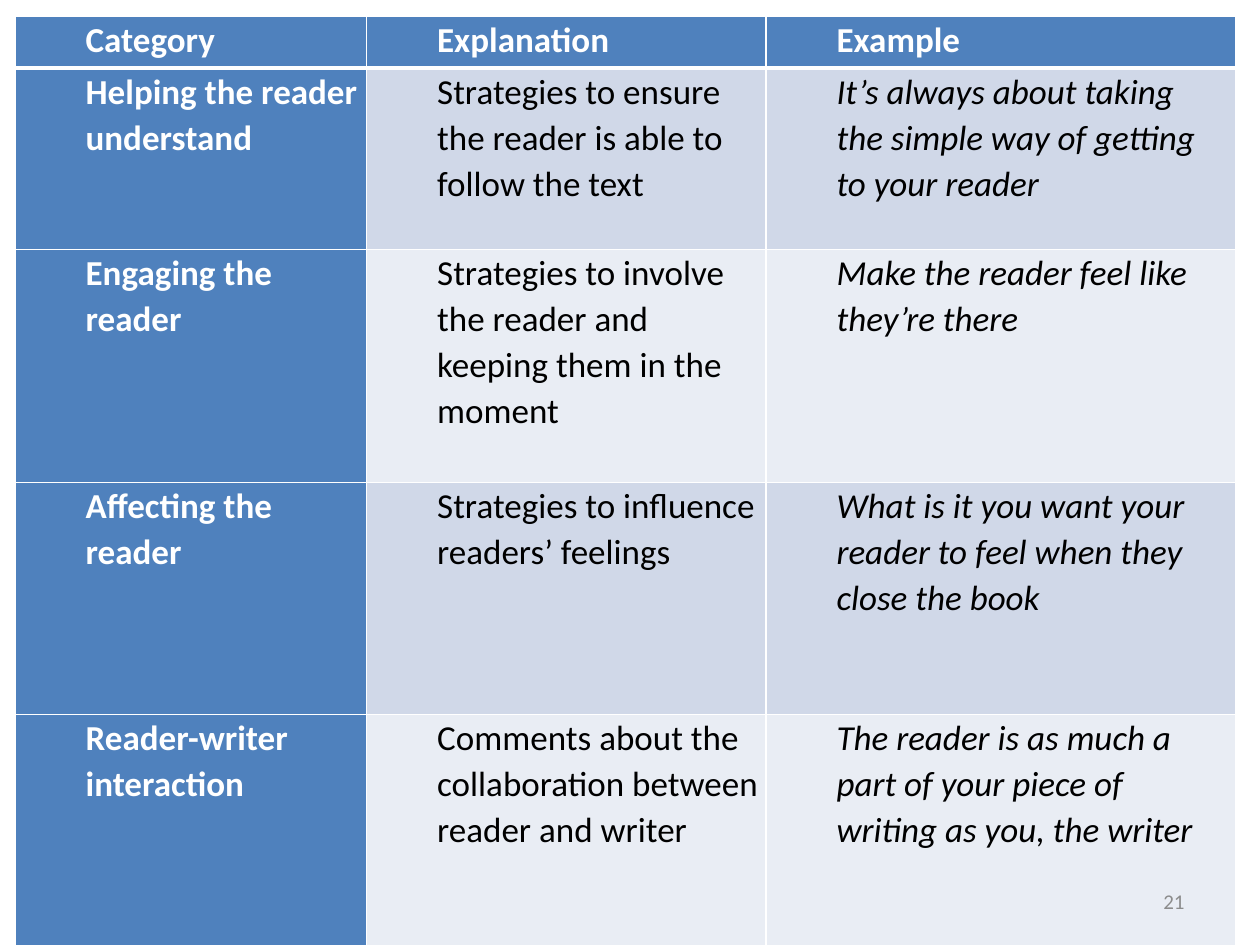
from lxml.etree import SubElement
from pptx import Presentation
from pptx.dml.color import RGBColor
from pptx.enum.text import MSO_ANCHOR, PP_ALIGN
from pptx.oxml.ns import qn
from pptx.util import Inches, Pt

WHITE, BLACK, BLUE, GREY = "FFFFFF", "000000", "4F81BD", "8C8C8C"
BANDS = ("D0D8E8", "E9EDF4")
COLUMN_WIDTHS = (2.79, 3.17, 3.73)
ROW_HEIGHTS = (0.41, 1.44, 1.85, 1.84, 1.84)
ROWS = (
    ("Category", "Explanation", "Example"),
    ("Helping the reader understand",
     "Strategies to ensure the reader is able to follow the text",
     "It’s always about taking the simple way of getting to your reader"),
    ("Engaging the reader",
     "Strategies to involve the reader and keeping them in the moment",
     "Make the reader feel like they’re there"),
    ("Affecting the reader",
     "Strategies to influence readers’ feelings",
     "What is it you want your reader to feel when they close the book"),
    ("Reader-writer interaction",
     "Comments about the collaboration between reader and writer",
     "The reader is as much a part of your piece of writing as you, the writer"),
)


def color(value):
    return RGBColor.from_string(value)


def write_text(frame, text, size=20, fill=BLACK, bold=False, italic=False,
               align=PP_ALIGN.LEFT, line_spacing=1.0, indent=0):
    frame.word_wrap = True
    paragraph = frame.paragraphs[0]
    paragraph.alignment = align
    paragraph.line_spacing = line_spacing
    properties = paragraph._p.get_or_add_pPr()
    properties.set("marL", str(Inches(indent)))
    properties.set("indent", "0")
    run = paragraph.add_run()
    run.text = text
    font = run.font
    font.name, font.size, font.bold, font.italic = "Calibri", Pt(size), bold, italic
    font.color.rgb = color(fill)


def set_borders(cell, **widths):
    """Draw white cell borders; widths are points keyed by side: L, R, T, B."""
    properties = cell._tc.get_or_add_tcPr()
    for side, width in widths.items():
        line = SubElement(properties, qn(f"a:ln{side}"), w=str(Pt(width)))
        fill = SubElement(line, qn("a:solidFill"))
        SubElement(fill, qn("a:srgbClr"), val=WHITE)


def fill_cell(cell, text, row, column):
    is_heading = row == 0 or column == 0
    cell.margin_left = cell.margin_right = Inches(0.06)
    cell.margin_top = cell.margin_bottom = 0
    set_borders(cell, L=1, R=1, T=3 if row == 1 else 1, B=3 if row == 0 else 1)
    cell.fill.solid()
    cell.fill.fore_color.rgb = color(BLUE if is_heading else BANDS[(row - 1) % 2])
    write_text(cell.text_frame, text, fill=WHITE if is_heading else BLACK,
               bold=is_heading, italic=row > 0 and column == 2,
               line_spacing=1.07, indent=0.5)


def add_strategy_table(slide, left, top):
    table = slide.shapes.add_table(
        len(ROWS), len(COLUMN_WIDTHS), Inches(left), Inches(top),
        Inches(sum(COLUMN_WIDTHS)), Inches(sum(ROW_HEIGHTS))).table
    for column, width in zip(table.columns, COLUMN_WIDTHS):
        column.width = Inches(width)
    for row, height in zip(table.rows, ROW_HEIGHTS):
        row.height = Inches(height)
    for row, texts in enumerate(ROWS):
        for column, text in enumerate(texts):
            fill_cell(table.cell(row, column), text, row, column)


def add_page_number(slide, left, top, width, height):
    box = slide.shapes.add_textbox(
        Inches(left), Inches(top), Inches(width), Inches(height))
    box.text_frame.vertical_anchor = MSO_ANCHOR.MIDDLE
    write_text(box.text_frame, "21", size=12, fill=GREY, align=PP_ALIGN.RIGHT)


def main():
    presentation = Presentation()
    presentation.slide_width, presentation.slide_height = Inches(10), Inches(7.5)
    slide = presentation.slides.add_slide(presentation.slide_layouts[6])
    add_strategy_table(slide, 0.12, 0.13)
    add_page_number(slide, 7.17, 6.95, 2.33, 0.4)
    presentation.save("out.pptx")


if __name__ == "__main__":
    main()
